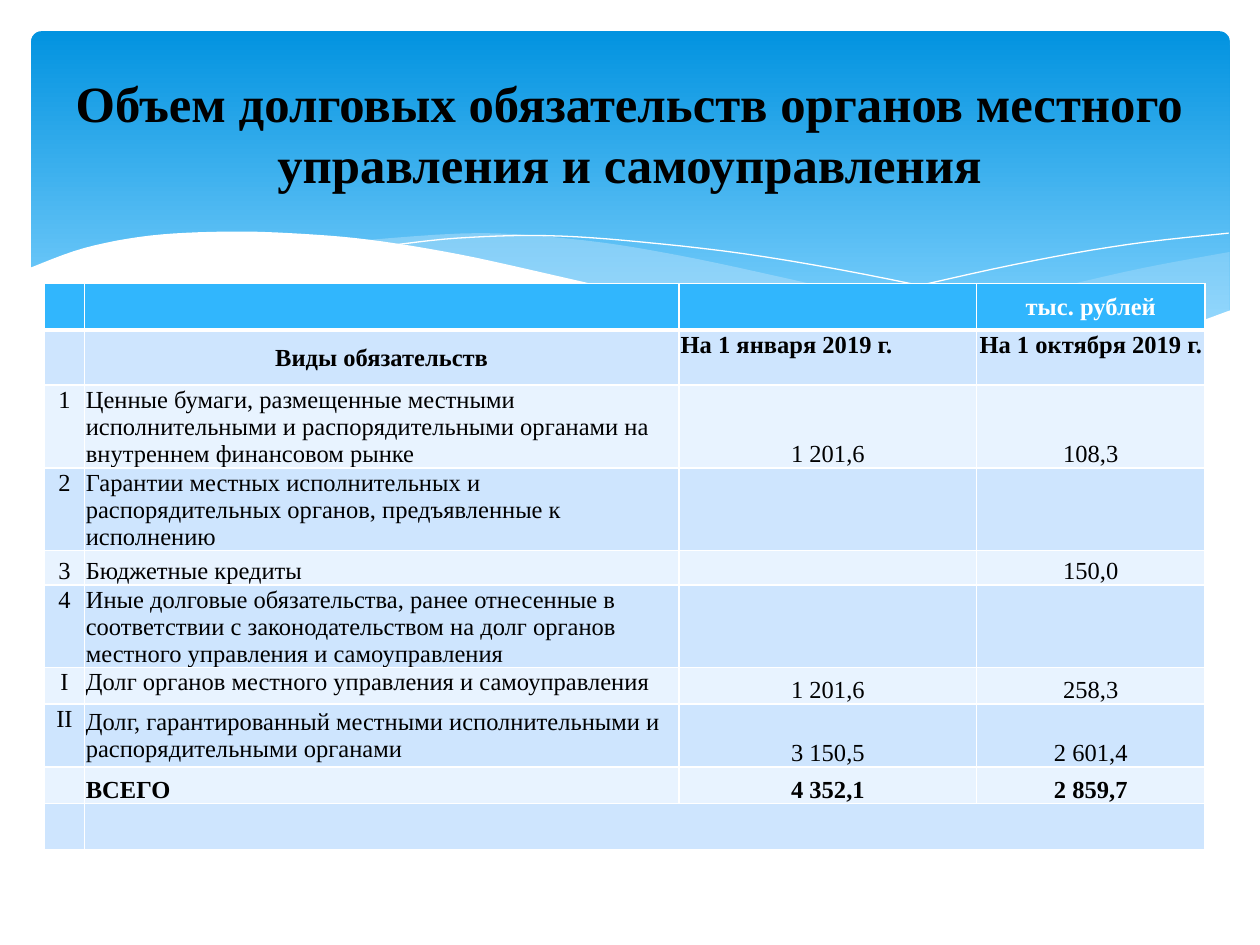
from pptx import Presentation
from pptx.dml.color import RGBColor
from pptx.enum.shapes import MSO_SHAPE
from pptx.enum.text import MSO_ANCHOR, PP_ALIGN
from pptx.oxml.ns import qn
from pptx.util import Cm, Pt
from lxml.etree import SubElement

BLACK = RGBColor(0x00, 0x00, 0x00)
WHITE = RGBColor(0xFF, 0xFF, 0xFF)
SKY_TOP = RGBColor(0x02, 0x93, 0xE0)
SKY_BOTTOM = RGBColor(0x83, 0xD3, 0xFE)
WAVE = RGBColor(0xC6, 0xE7, 0xFC)
HEADER = RGBColor(0x31, 0xB6, 0xFD)
BAND_DARK = RGBColor(0xCE, 0xE5, 0xFE)
BAND_LIGHT = RGBColor(0xE8, 0xF3, 0xFF)
FONT = "Times New Roman"
TOP, MIDDLE, BOTTOM = MSO_ANCHOR.TOP, MSO_ANCHOR.MIDDLE, MSO_ANCHOR.BOTTOM
LEFT, CENTER = PP_ALIGN.LEFT, PP_ALIGN.CENTER

RIGHT_WAVE = [
    [(24.79, 5.08), (23.01, 5.41), (21.13, 5.84), (19.13, 6.3), (16.79, 6.73)],
    [(16.79, 6.73), (18.59, 6.96), (20.4, 7.06), (22.15, 6.96), (23.57, 6.68), (24.79, 6.27)],
]
MIDDLE_WAVE = [
    [(22.68, 6.93), (20.5, 6.6), (17.93, 6.1), (15.98, 5.64), (13.74, 5.16),
     (11.81, 4.85), (9.65, 4.7), (7.26, 4.85)],
    [(7.26, 4.85), (9.73, 5.26), (11.4, 5.64), (14.38, 6.3), (16.89, 6.76),
     (19, 7.01), (20.78, 7.06), (22.68, 6.93)],
]
FALLING_LINE = [[(7.85, 4.95), (9.22, 4.8), (11, 4.75), (12.95, 4.88),
                 (15.44, 5.18), (18.47, 5.74), (21.11, 6.38), (23.04, 6.91)]]
RISING_LINE = [[(15.57, 6.53), (17.65, 5.97), (20.47, 5.33), (22.73, 4.93), (24.77, 4.7)]]
WHITE_WAVE = [
    [(24.82, 6.25), (23.37, 6.73), (21.59, 6.99), (19.76, 7.01), (17.48, 6.81),
     (15.32, 6.45), (13.44, 6.07), (11.35, 5.59), (9.27, 5.13), (7.42, 4.83),
     (5.84, 4.7), (4.5, 4.67), (3.02, 4.75), (1.7, 5), (0.58, 5.41)],
    [(0.58, 8.36), (24.82, 8.36)],
]

COLUMNS = [0.8, 11.99, 6, 4.6]
ROWS = [
    (0.93, ["", "", "", "тыс. рублей"], [MIDDLE] * 4),
    (1.11, ["", "Виды обязательств", "На 1 января 2019 г.", "На 1 октября 2019 г."],
     [TOP, MIDDLE, TOP, TOP]),
    (1.67, ["1", "Ценные бумаги, размещенные местными исполнительными и "
            "распорядительными органами на внутреннем финансовом рынке", "1 201,6", "108,3"],
     [TOP, TOP, BOTTOM, BOTTOM]),
    (1.67, ["2", "Гарантии местных исполнительных и распорядительных органов, "
            "предъявленные к исполнению", "", ""], [TOP] * 4),
    (0.69, ["3", "Бюджетные кредиты", "", "150,0"], [BOTTOM] * 4),
    (1.67, ["4", "Иные долговые обязательства, ранее отнесенные в соответствии с "
            "законодательством на долг органов местного управления и самоуправления", "", ""],
     [TOP] * 4),
    (0.73, ["I", "Долг органов местного управления и самоуправления", "1 201,6", "258,3"],
     [TOP, TOP, BOTTOM, BOTTOM]),
    (1.27, ["II", "Долг, гарантированный местными исполнительными и "
            "распорядительными органами", "3 150,5", "2 601,4"],
     [TOP, MIDDLE, BOTTOM, BOTTOM]),
    (0.74, ["", "ВСЕГО", "4 352,1", "2 859,7"], [BOTTOM] * 4),
    (0.93, ["", "", "", ""], [TOP] * 4),
]
BOLD_ROWS = (0, 1, 8)


def write(paragraph, text, size=14, color=BLACK, bold=False, align=CENTER):
    paragraph.alignment = align
    span = paragraph.add_run()
    span.text = text
    span.font.name = FONT
    span.font.size = Pt(size)
    span.font.bold = bold
    span.font.color.rgb = color


def smooth(points, steps=6):
    padded = [points[0], *points, points[-1]]
    result = [points[0]]
    for a, b, c, d in zip(padded, padded[1:], padded[2:], padded[3:]):
        for step in range(1, steps + 1):
            t = step / steps
            result.append(tuple(
                q + t / 2 * (r - p + t * (2 * p - 5 * q + 4 * r - s + t * (3 * (q - r) + s - p)))
                for p, q, r, s in zip(a, b, c, d)))
    return result


def add_curve(page, curves, fill=None, opacity=100):
    points = [(Cm(x), Cm(y)) for curve in curves for x, y in smooth(curve)]
    builder = page.shapes.build_freeform(*points[0])
    builder.add_line_segments(points[1:], close=fill is not None)
    shape = builder.convert_to_shape()
    shape.shadow.inherit = False
    if fill is None:
        shape.fill.background()
        shape.line.color.rgb = WHITE
        shape.line.width = Pt(0)
        return
    shape.fill.solid()
    shape.fill.fore_color.rgb = fill
    shape.line.fill.background()
    if opacity < 100:
        color = shape.fill._xPr.find(qn("a:solidFill"))[0]
        SubElement(color, qn("a:alpha"), val=str(opacity * 1000))


def add_sky(page):
    sky = page.shapes.add_shape(MSO_SHAPE.ROUNDED_RECTANGLE, Cm(0.63), Cm(0.63), Cm(24.16), Cm(6.86))
    sky.adjustments[0] = 0.03
    sky.shadow.inherit = False
    sky.line.fill.background()
    sky.fill.gradient()
    sky.fill.gradient_angle = 270
    for stop, color, position in zip(sky.fill.gradient_stops, (SKY_TOP, SKY_BOTTOM), (0, 0.9)):
        stop.color.rgb = color
        stop.position = position


def add_title(page, text):
    box = page.shapes.add_textbox(Cm(1.27), Cm(0.94), Cm(22.86), Cm(3.48))
    box.text_frame.word_wrap = True
    box.text_frame.vertical_anchor = MIDDLE
    write(box.text_frame.paragraphs[0], text, size=29, bold=True)


def set_borders(cell, top=1, bottom=1):
    properties = cell._tc.get_or_add_tcPr()
    for side, width in (("L", 1), ("R", 1), ("T", top), ("B", bottom)):
        line = SubElement(properties, qn(f"a:ln{side}"), w=str(Pt(width)))
        fill = SubElement(line, qn("a:solidFill"))
        SubElement(fill, qn("a:srgbClr"), val=str(WHITE))


def fill_cell(cell, text, row, column, anchor):
    set_borders(cell, top=3 if row == 1 else 1, bottom=3 if row == 0 else 1)
    cell.fill.solid()
    cell.fill.fore_color.rgb = HEADER if row == 0 else BAND_DARK if row % 2 else BAND_LIGHT
    cell.margin_left = cell.margin_right = cell.margin_top = Cm(0.03)
    cell.margin_bottom = 0
    cell.vertical_anchor = anchor
    paragraph = cell.text_frame.paragraphs[0]
    if text:
        left = (column == 1 and row > 1) or (column == 2 and row == 1)
        write(paragraph, text, color=WHITE if row == 0 else BLACK,
              bold=row in BOLD_ROWS, align=LEFT if left else CENTER)
    else:
        SubElement(paragraph._p, qn("a:endParaRPr"), sz="1400")


def add_debt_table(page):
    height = sum(row[0] for row in ROWS)
    frame = page.shapes.add_table(len(ROWS), len(COLUMNS), Cm(0.9), Cm(5.72),
                                  Cm(sum(COLUMNS)), Cm(height))
    table = frame.table
    for column, width in zip(table.columns, COLUMNS):
        column.width = Cm(width)
    for row, (height, texts, anchors) in enumerate(ROWS):
        table.rows[row].height = Cm(height)
        for column, (text, anchor) in enumerate(zip(texts, anchors)):
            fill_cell(table.cell(row, column), text, row, column, anchor)
    last = len(ROWS) - 1
    table.cell(last, 1).merge(table.cell(last, 3))


def main():
    deck = Presentation()
    deck.slide_width, deck.slide_height = Cm(25.4), Cm(19.05)
    page = deck.slides.add_slide(deck.slide_layouts[6])
    add_sky(page)
    add_curve(page, RIGHT_WAVE, fill=WAVE, opacity=29)
    add_curve(page, MIDDLE_WAVE, fill=WAVE, opacity=40)
    add_curve(page, FALLING_LINE)
    add_curve(page, RISING_LINE)
    add_curve(page, WHITE_WAVE, fill=WHITE)
    add_debt_table(page)
    add_title(page, "Объем долговых обязательств органов местного управления и самоуправления")
    deck.save("out.pptx")


if __name__ == "__main__":
    main()
